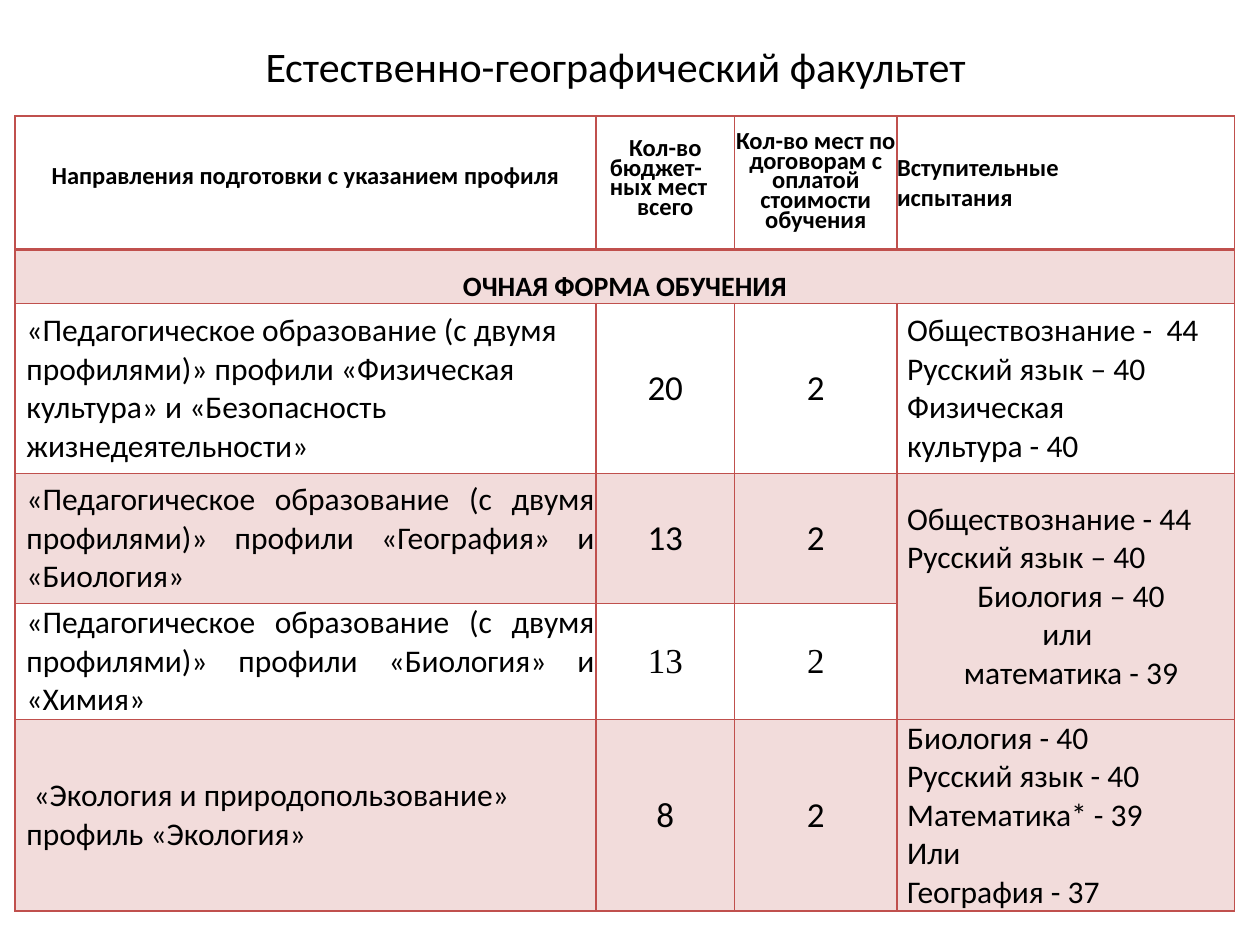
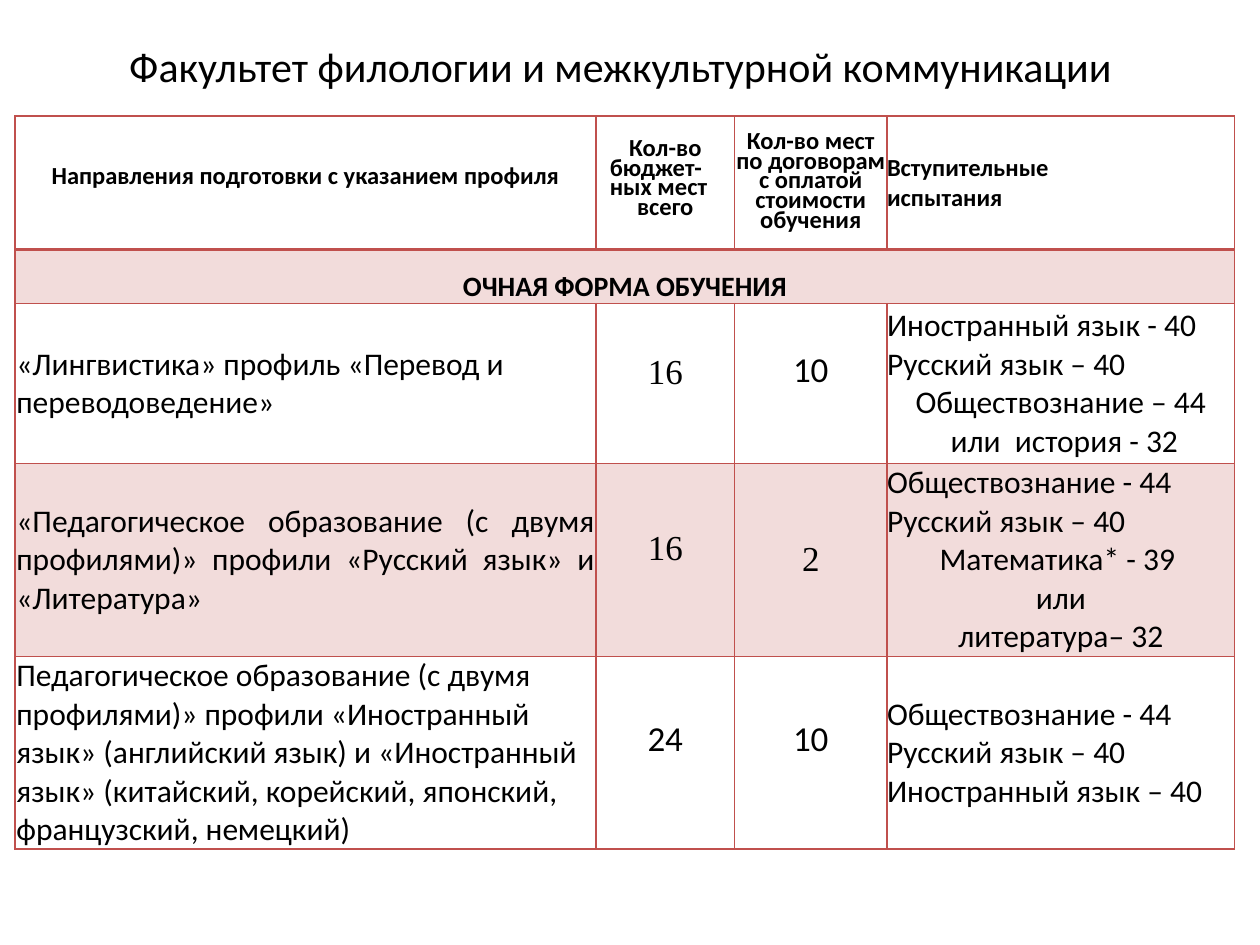
"""Builds two slides listing the admission places and exams of two faculties."""
from dataclasses import dataclass
from typing import Optional

import pptx
import pptx.dml.color
import pptx.enum.text
import pptx.oxml
import pptx.oxml.ns
import pptx.util
from pptx.util import Inches

ALIGN = pptx.enum.text.PP_ALIGN
ANCHOR = pptx.enum.text.MSO_ANCHOR
BLACK, RED = "000000", "C0504D"
SANS, SERIF = "Calibri", "Times New Roman"
BAND_ALPHA = 20000
TABLE_LEFT, TABLE_TOP = 0.12, 0.92
HEADER_HEIGHTS = [1.06, 0.43]
TIGHT, HEADER_SPACING = 9.5, 11.3
EXAM_INDENT = 0.08


@dataclass
class Line:
    """One paragraph and its layout."""
    text: str
    align: ALIGN = ALIGN.LEFT
    margin: float = 0
    indent: float = 0
    spacing: Optional[float] = None


@dataclass
class Entry:
    """The content and type style of one table cell."""
    lines: list[Line]
    size: float = 18
    font: str = SANS
    bold: bool = False
    anchor: ANCHOR = ANCHOR.MIDDLE
    side: float = 0.01
    top: float = 0


@dataclass
class Programme:
    """One programme row; exams is None when shared with the row above."""
    title: Line
    budget: Entry
    contract: Entry
    exams: Optional[Entry]
    height: float


@dataclass
class Faculty:
    """One slide: the faculty, its column widths and its programmes."""
    name: str
    widths: list[float]
    programmes: list[Programme]


def places(count: int, font: str = SANS, spacing: Optional[float] = None) -> Entry:
    """Return a centred number of places."""
    return Entry([Line(str(count), ALIGN.CENTER, spacing=spacing)], 20, font)


def exams(left: list[str], centred: tuple[str, ...] = (), indent: float = 0) -> Entry:
    """Return the exams, the alternatives being centred."""
    lines = [Line(text, indent=indent) for text in left]
    lines += [Line(text, ALIGN.CENTER, indent=indent) for text in centred]
    return Entry(lines, side=0)


def heading(*lines: Line, **layout) -> Entry:
    """Return a bold column heading."""
    return Entry(list(lines), 14, bold=True, **layout)


HEADINGS = [
    heading(Line("Направления подготовки с указанием профиля", ALIGN.CENTER, spacing=TIGHT)),
    heading(Line("Кол-во", ALIGN.CENTER, spacing=HEADER_SPACING),
            Line("бюджет-ных мест", margin=0.1, spacing=HEADER_SPACING),
            Line("всего", ALIGN.CENTER, spacing=HEADER_SPACING)),
    heading(Line("Кол-во мест по договорам с оплатой стоимости обучения", ALIGN.CENTER,
                 spacing=HEADER_SPACING), anchor=ANCHOR.TOP, top=0.16),
    heading(Line("Вступительные"), Line("испытания"), side=0),
]
STUDY_FORM = Entry([Line("ОЧНАЯ ФОРМА ОБУЧЕНИЯ", ALIGN.CENTER)], 16, bold=True,
                   anchor=ANCHOR.BOTTOM)

FACULTIES = [
    Faculty("Естественно-географический факультет ", [4.61, 1.1, 1.29, 2.68], [
        Programme(
            Line("«Педагогическое образование (с двумя профилями)» профили «Физическая "
                 "культура» и «Безопасность жизнедеятельности»", margin=0.08),
            places(20), places(2),
            exams(["Обществознание -  44", "Русский язык – 40", "Физическая",
                   "культура - 40"], indent=EXAM_INDENT), 1.35),
        Programme(
            Line("«Педагогическое образование (с двумя профилями)» профили «География» "
                 "и «Биология»", ALIGN.JUSTIFY, 0.08),
            places(13), places(2),
            exams(["Обществознание - 44", "Русский язык – 40"],
                  ("Биология – 40", "или ", "математика - 39"), EXAM_INDENT), 1.03),
        Programme(
            Line("«Педагогическое образование (с двумя профилями)» профили «Биология» "
                 "и «Химия»", ALIGN.JUSTIFY, 0.08),
            places(13, SERIF), places(2, SERIF), None, 0.92),
        Programme(
            Line(" «Экология и природопользование» профиль «Экология»", margin=0.08),
            places(8), places(2),
            exams(["Биология - 40", "Русский язык - 40", "Математика* - 39", "Или",
                   "География - 37"], indent=EXAM_INDENT), 1.52),
    ]),
    Faculty("Факультет филологии и межкультурной коммуникации", [4.61, 1.1, 1.21, 2.76], [
        Programme(
            Line("«Лингвистика» профиль «Перевод и переводоведение»"),
            places(16, SERIF, TIGHT), places(10, spacing=TIGHT),
            exams(["Иностранный язык - 40", "Русский язык – 40"],
                  ("Обществознание – 44", " или  история - 32")), 1.27),
        Programme(
            Line("«Педагогическое образование (с двумя профилями)» профили «Русский язык» "
                 "и «Литература»", ALIGN.JUSTIFY),
            places(16, SERIF, TIGHT), places(2, SERIF),
            exams(["Обществознание - 44", "Русский язык – 40"],
                  ("Математика* - 39 ", "или", "литература– 32")), 1.53),
        Programme(
            Line("Педагогическое образование (с двумя профилями)» профили «Иностранный "
                 "язык» (английский язык) и «Иностранный язык» (китайский, корейский, "
                 "японский, французский, немецкий)"),
            places(24, spacing=TIGHT), places(10, spacing=TIGHT),
            exams(["Обществознание - 44", "Русский язык – 40",
                   "Иностранный язык – 40"]), 1.53),
    ]),
]


def colour(value: str) -> pptx.dml.color.RGBColor:
    """Return the colour of a hex string."""
    return pptx.dml.color.RGBColor.from_string(value)


def write(frame, entry: Entry) -> None:
    """Write the lines of an entry and format them."""
    frame.text = "\n".join(line.text for line in entry.lines)
    frame.word_wrap = True
    for paragraph, line in zip(frame.paragraphs, entry.lines):
        paragraph.alignment = line.align
        if line.spacing:
            paragraph.line_spacing = pptx.util.Pt(line.spacing)
        properties = paragraph._p.get_or_add_pPr()
        properties.set("marL", str(Inches(line.margin)))
        properties.set("indent", str(Inches(line.indent)))
        for run in paragraph.runs:
            run.font.name = entry.font
            run.font.size = pptx.util.Pt(entry.size)
            run.font.bold = entry.bold
            run.font.color.rgb = colour(BLACK)


def style_cell(cell, row: int) -> None:
    """Draw the borders of a cell and shade every second row."""
    properties = cell._tc.get_or_add_tcPr()
    for side in "LRTB":
        heavy = (row == 0 and side == "B") or (row == 1 and side == "T")
        width = pptx.util.Pt(2 if heavy else 1)
        properties.append(pptx.oxml.parse_xml(
            f'<a:ln{side} {pptx.oxml.ns.nsdecls("a")} w="{width}"><a:solidFill>'
            f'<a:srgbClr val="{RED}"/></a:solidFill></a:ln{side}>'))
    if row % 2 == 0:
        cell.fill.background()
        return
    cell.fill.solid()
    cell.fill.fore_color.rgb = colour(RED)
    shade = properties.find(pptx.oxml.ns.qn("a:solidFill"))[0]
    shade.append(pptx.oxml.parse_xml(
        f'<a:alpha {pptx.oxml.ns.nsdecls("a")} val="{BAND_ALPHA}"/>'))


def fill_cell(cell, entry: Entry) -> None:
    """Place an entry in a cell."""
    cell.margin_left = cell.margin_right = Inches(entry.side)
    cell.margin_top, cell.margin_bottom = Inches(entry.top), 0
    cell.vertical_anchor = entry.anchor
    write(cell.text_frame, entry)


def add_title(slide, name: str) -> None:
    """Add the faculty name above the table."""
    title = slide.shapes.add_textbox(Inches(0.2), Inches(0.13), Inches(9.45), Inches(0.79))
    title.text_frame.vertical_anchor = ANCHOR.MIDDLE
    write(title.text_frame, Entry([Line(name, ALIGN.CENTER)], 24))


def add_places_table(slide, faculty: Faculty) -> None:
    """Add the table of programmes, places and exams."""
    heights = HEADER_HEIGHTS + [programme.height for programme in faculty.programmes]
    table = slide.shapes.add_table(
        len(heights), len(faculty.widths), Inches(TABLE_LEFT), Inches(TABLE_TOP),
        Inches(sum(faculty.widths)), Inches(sum(heights))).table
    table.first_row = table.horz_banding = False
    for column, width in zip(table.columns, faculty.widths):
        column.width = Inches(width)
    for row, height in zip(table.rows, heights):
        row.height = Inches(height)

    table.cell(1, 0).merge(table.cell(1, 3))
    rows = [HEADINGS, [STUDY_FORM, None, None, None]]
    for programme in faculty.programmes:
        if programme.exams is None:
            table.cell(len(rows) - 1, 3).merge(table.cell(len(rows), 3))
        rows.append([Entry([programme.title]), programme.budget, programme.contract,
                     programme.exams])
    for row, entries in enumerate(rows):
        for column, entry in enumerate(entries):
            cell = table.cell(row, column)
            style_cell(cell, row)
            if entry:
                fill_cell(cell, entry)


def main() -> None:
    """Build and save the presentation."""
    presentation = pptx.Presentation()
    presentation.slide_width, presentation.slide_height = Inches(10), Inches(7.5)
    for faculty in FACULTIES:
        slide = presentation.slides.add_slide(presentation.slide_layouts[6])
        add_title(slide, faculty.name)
        add_places_table(slide, faculty)
    presentation.save("out.pptx")


if __name__ == "__main__":
    main()
